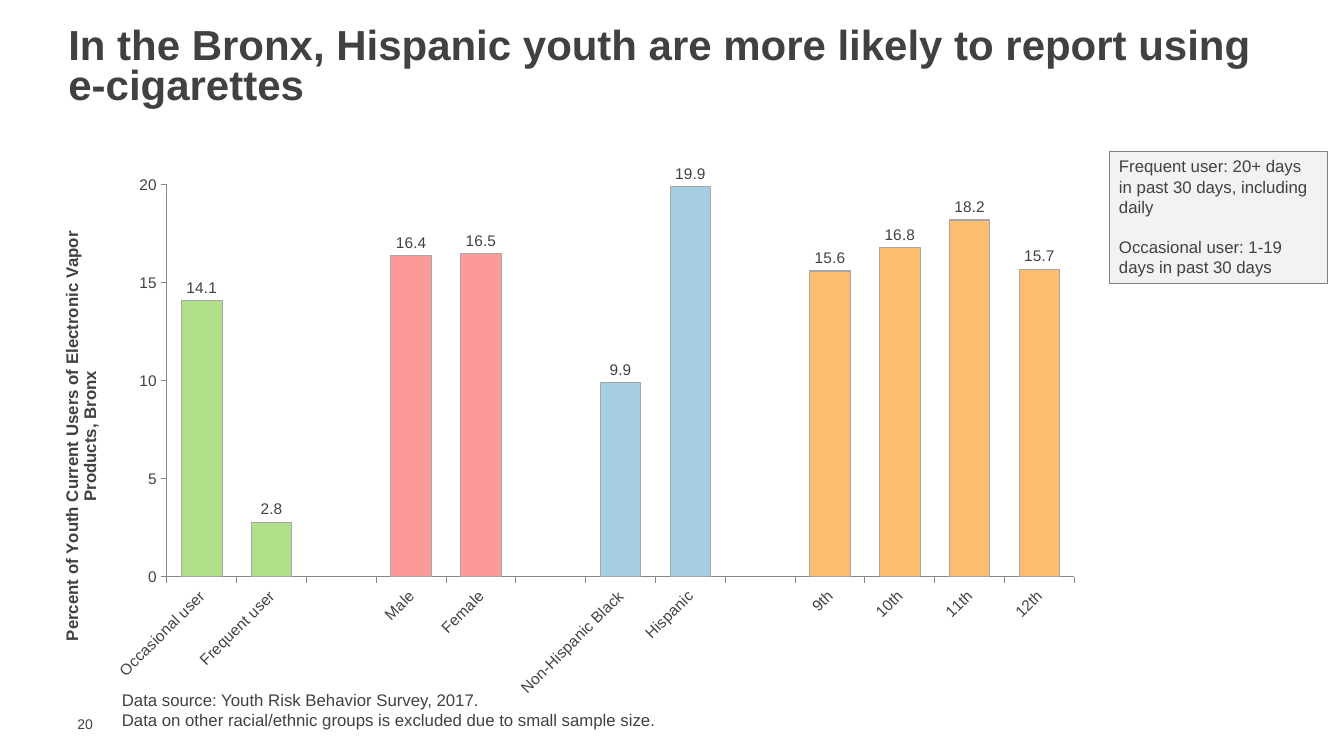
from lxml.etree import SubElement
from pptx import Presentation
from pptx.chart.data import CategoryChartData
from pptx.dml.color import RGBColor
from pptx.enum.chart import XL_CHART_TYPE, XL_LABEL_POSITION, XL_TICK_MARK
from pptx.enum.shapes import MSO_SHAPE
from pptx.enum.text import MSO_ANCHOR, PP_ALIGN
from pptx.oxml.ns import qn
from pptx.util import Inches, Pt

FONT = "Arial"
COLORS = {
    "text": "414042",
    "axis": "868686",
    "bar_line": "A6A6A6",
    "note_fill": "F2F2F2",
    "note_line": "808080",
    "use": "B2DF8A",
    "sex": "FB9A99",
    "race": "A6CEE3",
    "grade": "FDBF6F",
}
GROUPS = [
    ("use", [("Occasional user", 14.1), ("Frequent user", 2.8)]),
    ("sex", [("Male", 16.4), ("Female", 16.5)]),
    ("race", [("Non-Hispanic Black", 9.9), ("Hispanic", 19.9)]),
    ("grade", [("9th", 15.6), ("10th", 16.8), ("11th", 18.2), ("12th", 15.7)]),
]
PLOT_AREA = {"x": 0.105, "y": 0.047, "w": 0.879, "h": 0.722}


def rgb(name):
    return RGBColor.from_string(COLORS[name])


def style_font(font, size, bold=False):
    font.name = FONT
    font.size = Pt(size)
    font.bold = bold
    font.color.rgb = rgb("text")


def style_line(line, color):
    line.color.rgb = rgb(color)
    line.width = Pt(0.75)


def write_text(s, lines, size, bold=False, anchor=MSO_ANCHOR.TOP, gap=0, spacing=None):
    """Fill a shape with one paragraph per line, gap points apart."""
    tf = s.text_frame
    tf.word_wrap = True
    tf.vertical_anchor = anchor
    for i, line in enumerate(lines):
        p = tf.paragraphs[0] if i == 0 else tf.add_paragraph()
        p.text = line
        p.alignment = PP_ALIGN.LEFT
        if i and gap:
            p.space_before = Pt(gap)
        if spacing:
            p.line_spacing = spacing
        style_font(p.font, size, bold)
    return tf


def add_text(slide, box, lines, size, **options):
    s = slide.shapes.add_textbox(*map(Inches, box))
    return write_text(s, lines, size, **options)


def add_note(slide, box, lines):
    s = slide.shapes.add_shape(MSO_SHAPE.RECTANGLE, *map(Inches, box))
    s.shadow.inherit = False
    s.fill.solid()
    s.fill.fore_color.rgb = rgb("note_fill")
    style_line(s.line, "note_line")
    write_text(s, lines, 12, gap=14)


def set_plot_area(chart):
    """Fix the inner plot area as fractions of the chart."""
    plot_area = chart._chartSpace.chart.plotArea
    layout = plot_area.find(qn("c:layout"))
    if layout is None:
        layout = SubElement(plot_area, qn("c:layout"))
        plot_area.insert(0, layout)
    manual = SubElement(layout, qn("c:manualLayout"))
    settings = {"layoutTarget": "inner", "xMode": "edge", "yMode": "edge", **PLOT_AREA}
    for tag, value in settings.items():
        SubElement(manual, qn(f"c:{tag}")).set("val", str(value))


def style_axes(chart, title):
    for axis in (chart.category_axis, chart.value_axis):
        axis.has_major_gridlines = False
        axis.major_tick_mark = XL_TICK_MARK.OUTSIDE
        style_line(axis.format.line, "axis")
        style_font(axis.tick_labels.font, 11)
    body = chart.category_axis._element.find(qn("c:txPr")).find(qn("a:bodyPr"))
    body.set("rot", "-2700000")
    body.set("vert", "horz")

    values = chart.value_axis
    values.minimum_scale, values.maximum_scale, values.major_unit = 0, 20, 5
    values.tick_labels.number_format = "0"
    values.tick_labels.number_format_is_linked = False
    p = values.axis_title.text_frame.paragraphs[0]
    p.text = title
    style_font(p.font, 12, bold=True)


def add_usage_chart(slide, box, title):
    bars = []
    for color, members in GROUPS:
        if bars:
            bars.append(("", None, None))
        bars += [(label, value, color) for label, value in members]

    data = CategoryChartData(number_format="0.0")
    data.categories = [label for label, _, _ in bars]
    data.add_series("Series 1", [value for _, value, _ in bars])
    chart = slide.shapes.add_chart(
        XL_CHART_TYPE.COLUMN_CLUSTERED, *map(Inches, box), data).chart
    chart.has_legend = False
    chart.has_title = False
    style_font(chart.font, 11)
    set_plot_area(chart)
    style_axes(chart, title)

    plot = chart.plots[0]
    plot.gap_width = 72
    plot.vary_by_categories = False
    plot.has_data_labels = True
    labels = plot.data_labels
    labels.show_value = True
    labels.position = XL_LABEL_POSITION.OUTSIDE_END
    style_font(labels.font, 11)

    series = plot.series[0]
    series.format.fill.solid()
    series.format.fill.fore_color.rgb = rgb("use")
    style_line(series.format.line, "bar_line")
    for i, (_, _, color) in enumerate(bars):
        if color:
            bar = series.points[i].format
            bar.fill.solid()
            bar.fill.fore_color.rgb = rgb(color)
            style_line(bar.line, "bar_line")


def main():
    prs = Presentation()
    prs.slide_width, prs.slide_height = Inches(13.33), Inches(7.5)
    slide = prs.slides.add_slide(prs.slide_layouts[6])

    number = add_text(slide, (0.67, 7.1, 0.43, 0.17), ["20"], 10, anchor=MSO_ANCHOR.MIDDLE)
    number.margin_top = number.margin_bottom = number.margin_right = 0
    add_text(slide, (0.58, 0.22, 12, 0.91),
             ["In the Bronx, Hispanic youth are more likely to report using e-cigarettes"],
             30, bold=True, anchor=MSO_ANCHOR.MIDDLE, spacing=0.8)
    add_text(slide, (1.11, 6.79, 9.71, 0.5),
             ["Data source: Youth Risk Behavior Survey, 2017.",
              "Data on other racial/ethnic groups is excluded due to small sample size."], 12)
    add_usage_chart(slide, (0.58, 1.58, 10.24, 5.39),
                    "Percent of Youth Current Users of Electronic Vapor Products, Bronx")
    add_note(slide, (11, 1.5, 2.17, 1.31),
             ["Frequent user: 20+ days in past 30 days, including daily",
              "Occasional user: 1-19 days in past 30 days"])
    prs.save("out.pptx")


if __name__ == "__main__":
    main()
